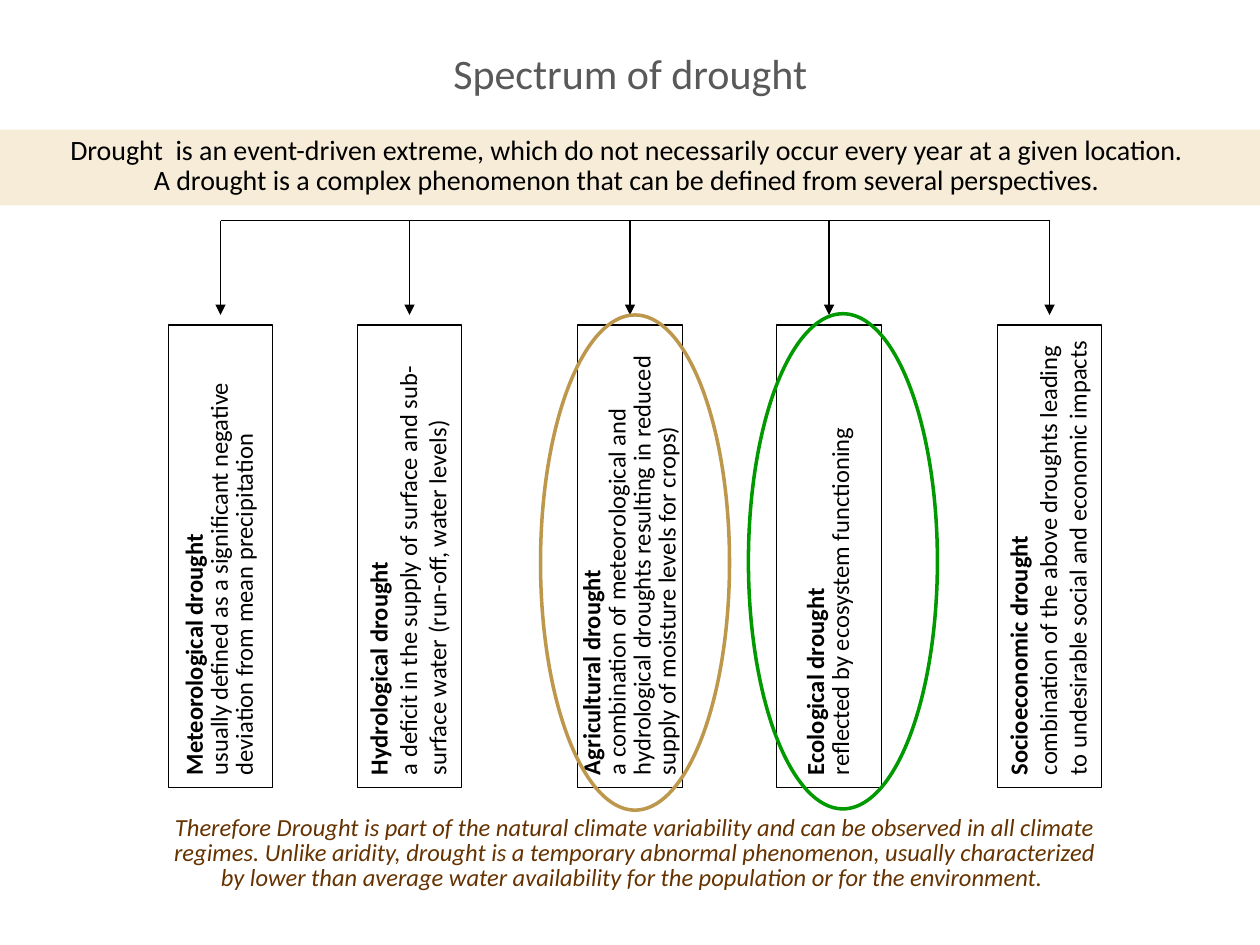
"""Build the 'Spectrum of drought' slide."""
from lxml.etree import SubElement
from pptx import Presentation
from pptx.dml.color import RGBColor
from pptx.enum.shapes import MSO_CONNECTOR as CONN, MSO_SHAPE as SHAPE
from pptx.enum.text import MSO_ANCHOR as ANCHOR, PP_ALIGN as ALIGN
from pptx.oxml.ns import qn
from pptx.util import Inches, Pt

COLORS = {
    "black": "000000", "white": "FFFFFF", "title": "595959", "brown": "663300",
    "band": "F2E2C4", "gold": "BD974B", "green": "009900",
}
C = {name: RGBColor.from_string(value) for name, value in COLORS.items()}

prs = Presentation()
prs.slide_width, prs.slide_height = Inches(10), Inches(7.5)
s = prs.slides.add_slide(prs.slide_layouts[6])


def write(sp, lines, size, color, align, spacings, anchor=ANCHOR.TOP, wrap=True):
    tf = sp.text_frame
    tf.text = "\n".join(lines)
    tf.word_wrap = wrap
    tf.vertical_anchor = anchor
    for p, spacing in zip(tf.paragraphs, spacings):
        p.alignment = align
        p.line_spacing = spacing
        for r in p.runs:
            r.font.name = "Calibri"
            r.font.size = Pt(size)
            r.font.color.rgb = C[color]


def add_line(x1, y1, x2, y2, arrow=False):
    cn = s.shapes.add_connector(CONN.STRAIGHT, Inches(x1), Inches(y1), Inches(x2), Inches(y2))
    cn.line.color.rgb = C["black"]
    cn.line.width = Pt(0.75)
    if arrow:
        SubElement(cn.line._get_or_add_ln(), qn("a:tailEnd"), type="triangle")
    SubElement(cn._element.spPr, qn("a:effectLst"))


title = s.shapes.add_textbox(Inches(0.04), Inches(0.28), Inches(10), Inches(0.55))
write(title, ["Spectrum of drought "], 24, "title", ALIGN.CENTER, [1], ANCHOR.BOTTOM)

conclusion = s.shapes.add_textbox(Inches(1.22), Inches(6.43), Inches(7.64), Inches(0.7))
write(conclusion, [
    "Therefore Drought is part of the natural climate variability and can be observed in all "
    "climate regimes. Unlike aridity, drought is a temporary abnormal phenomenon, usually "
    "characterized by lower than average water availability for the population or for the "
    "environment. "], 14, "brown", ALIGN.CENTER, [0.85])
conclusion.text_frame.paragraphs[0].runs[0].font.italic = True

droughts = [
    (1.75, [0.85, 0.85, 0.85], ["Meteorological drought",
                                "usually defined as a significant negative",
                                "deviation from mean precipitation"]),
    (3.25, [0.85, 1, 1], ["Hydrological drought",
                          "a deficit in the supply of surface and sub-",
                          "surface water (run-off, water levels)"]),
    (5, [0.9, 0.85, 0.85, 0.85], ["Agricultural drought",
                                  "a combination of meteorological and",
                                  "hydrological droughts resulting in reduced",
                                  "supply of moisture levels for crops)"]),
    (6.58, [0.85, 0.85], ["Ecological drought", "reflected by ecosystem functioning"]),
    (8.33, [0.85, 1, 1], ["Socioeconomic drought",
                          "combination of the above droughts leading",
                          "to undesirable social and economic impacts"]),
]
box_w, box_h = 3.67, 0.83
add_line(droughts[0][0], 1.75, droughts[-1][0], 1.75)
for x, spacings, lines in droughts:
    add_line(x, 1.75, x, 2.5, arrow=True)
    sp = s.shapes.add_shape(SHAPE.RECTANGLE, Inches(x - box_w / 2), Inches(4),
                            Inches(box_w), Inches(box_h))
    sp.rotation = 270
    sp.shadow.inherit = False
    sp.fill.solid()
    sp.fill.fore_color.rgb = C["white"]
    sp.line.color.rgb = C["black"]
    sp.line.width = Pt(0.75)
    write(sp, lines, 14, "black", ALIGN.LEFT, spacings, ANCHOR.MIDDLE, wrap=False)
    sp.text_frame.paragraphs[0].runs[0].font.bold = True

band = s.shapes.add_shape(SHAPE.RECTANGLE, 0, Inches(1.03), Inches(10), Inches(0.6))
band.shadow.inherit = False
band.fill.solid()
band.fill.fore_color.rgb = C["band"]
SubElement(band._element.spPr.find(".//" + qn("a:srgbClr")), qn("a:alpha"), val="65000")
band.line.fill.background()
write(band, [
    "Drought  is an event-driven extreme, which do not necessarily occur every year at a "
    "given location. ",
    "A drought is a complex phenomenon that can be defined from several perspectives. "],
    16, "black", ALIGN.CENTER, [0.9, 0.9])

for x, y, color in [(4.29, 2.5, "gold"), (5.94, 2.49, "green")]:
    ring = s.shapes.add_shape(SHAPE.OVAL, Inches(x), Inches(y), Inches(1.5), Inches(3.93))
    ring.shadow.inherit = False
    ring.fill.background()
    ring.line.color.rgb = C[color]
    ring.line.width = Pt(2)

prs.save("out.pptx")
